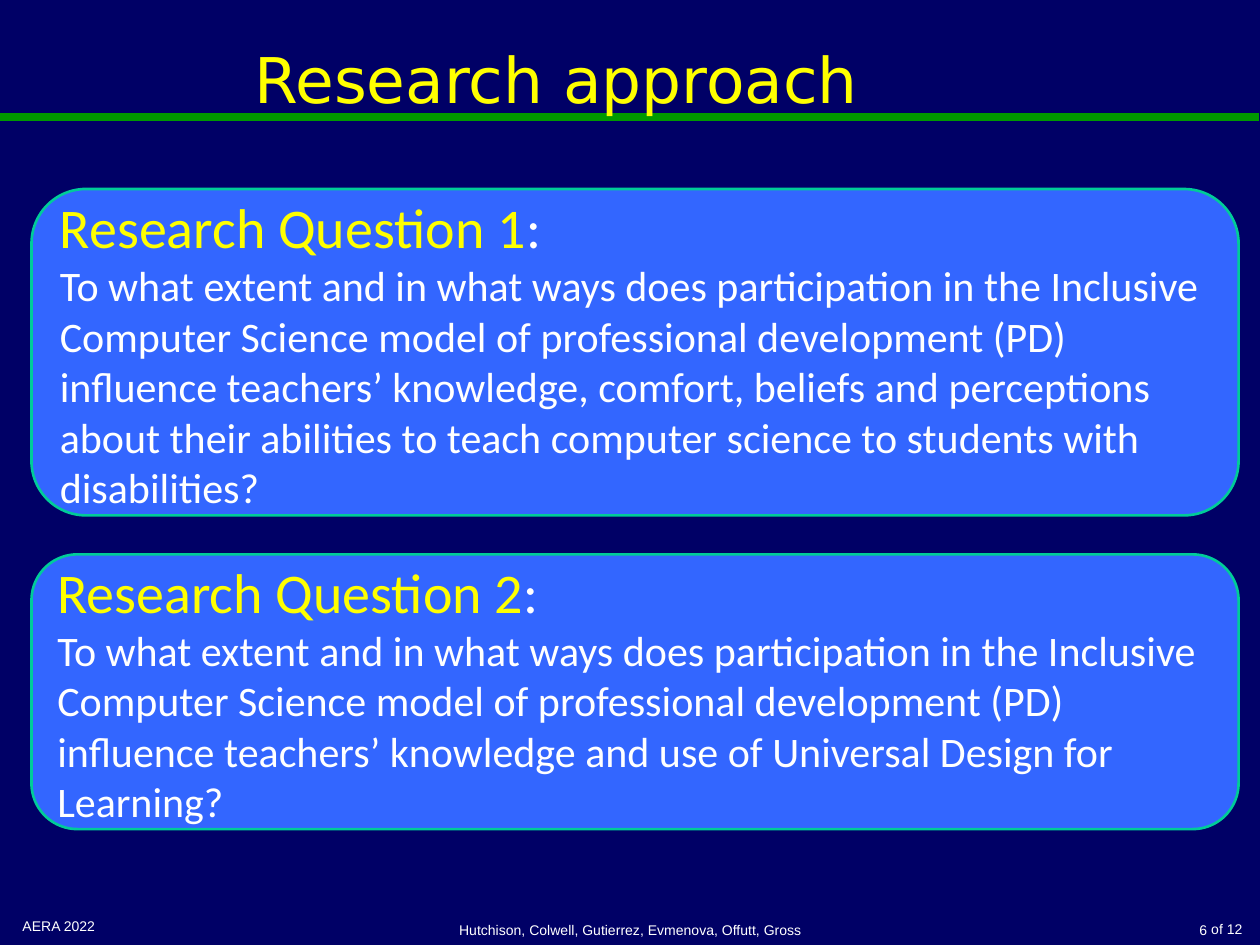
from lxml.etree import SubElement
from pptx import Presentation
from pptx.dml.color import RGBColor
from pptx.enum.shapes import MSO_CONNECTOR, MSO_SHAPE
from pptx.enum.text import MSO_ANCHOR as Anchor, PP_ALIGN as Align
from pptx.oxml.ns import qn
from pptx.util import Inches, Pt

NAVY = RGBColor(0x00, 0x00, 0x66)
GREEN = RGBColor(0x00, 0x99, 0x00)
BLUE = RGBColor(0x33, 0x66, 0xFF)
TEAL = RGBColor(0x00, 0xCC, 0x99)
YELLOW = RGBColor(0xFF, 0xFF, 0x00)
WHITE = RGBColor(0xFF, 0xFF, 0xFF)

STEM = (
    "To what extent and in what ways does participation in the Inclusive "
    "Computer Science model of professional development (PD) influence teachers’ knowledge"
)
QUESTIONS = [
    (1.5, 2.59, "Research Question 1",
     STEM + ", comfort, beliefs and perceptions about their abilities to teach "
     "computer science to students with disabilities?"),
    (4.4, 2.18, "Research Question 2",
     STEM + " and use of Universal Design for Learning?"),
]
FOOTERS = [
    ((0.08, 7.23, 2.33, 0.26), "AERA 2022", Align.LEFT, Anchor.TOP),
    ((3.42, 7.23, 3.17, 0.27), "Hutchison, Colwell, Gutierrez, Evmenova, Offutt, Gross",
     Align.CENTER, Anchor.BOTTOM),
    ((7.87, 7.23, 1.81, 0.27), "6", Align.RIGHT, Anchor.BOTTOM),
    ((9.5, 7.26, 0.46, 0.24), "of 12", Align.RIGHT, Anchor.TOP),
]


def add_run(paragraph, text, size, font, color):
    """Append one styled run to a paragraph."""
    run = paragraph.add_run()
    run.text = text
    run.font.size = Pt(size)
    run.font.name = font
    run.font.color.rgb = color


def add_label(slide, box, text, size, font, color, align, anchor):
    """Place a single line of text in the given box."""
    label = slide.shapes.add_textbox(*map(Inches, box))
    frame = label.text_frame
    frame.word_wrap = True
    frame.vertical_anchor = anchor
    frame.paragraphs[0].alignment = align
    add_run(frame.paragraphs[0], text, size, font, color)


def add_header(slide, box):
    """Draw the green rule and the title centred in the given box."""
    rule_y = Inches(0.93)
    rule = slide.shapes.add_connector(
        MSO_CONNECTOR.STRAIGHT, Inches(0), rule_y, Inches(9.99), rule_y)
    rule.line.color.rgb = GREEN
    rule.line.width = Pt(4.5)
    SubElement(rule._element.spPr, qn("a:effectLst"))
    add_label(slide, box, "Research approach", 36, "DejaVu Sans", YELLOW,
              Align.CENTER, Anchor.MIDDLE)


def add_question(slide, box, heading, question):
    """Draw a rounded panel with a heading and its research question."""
    panel = slide.shapes.add_shape(MSO_SHAPE.ROUNDED_RECTANGLE, *map(Inches, box))
    panel.shadow.inherit = False
    panel.fill.solid()
    panel.fill.fore_color.rgb = BLUE
    panel.line.color.rgb = TEAL
    panel.line.width = Pt(1.5)
    frame = panel.text_frame
    frame.word_wrap = True
    frame.vertical_anchor = Anchor.MIDDLE
    title, body = frame.paragraphs[0], frame.add_paragraph()
    title.alignment = body.alignment = Align.LEFT
    add_run(title, heading, 32, "Calibri", YELLOW)
    add_run(title, ":", 32, "Calibri", WHITE)
    add_run(body, question, 24, "Calibri", WHITE)


def add_footer(slide):
    """Place the event, authors and page count along the bottom."""
    for box, text, align, anchor in FOOTERS:
        add_label(slide, box, text, 8, "Arial", WHITE, align, anchor)


def main():
    """Build and save the research approach slide."""
    deck = Presentation()
    deck.slide_width, deck.slide_height = Inches(10), Inches(7.5)
    slide = deck.slides.add_slide(deck.slide_layouts[6])
    slide.background.fill.solid()
    slide.background.fill.fore_color.rgb = NAVY
    add_header(slide, (0.08, 0, 8.67, 1.25))
    for top, height, heading, question in QUESTIONS:
        add_question(slide, (0.25, top, 9.58, height), heading, question)
    add_footer(slide)
    deck.save("out.pptx")


if __name__ == "__main__":
    main()
